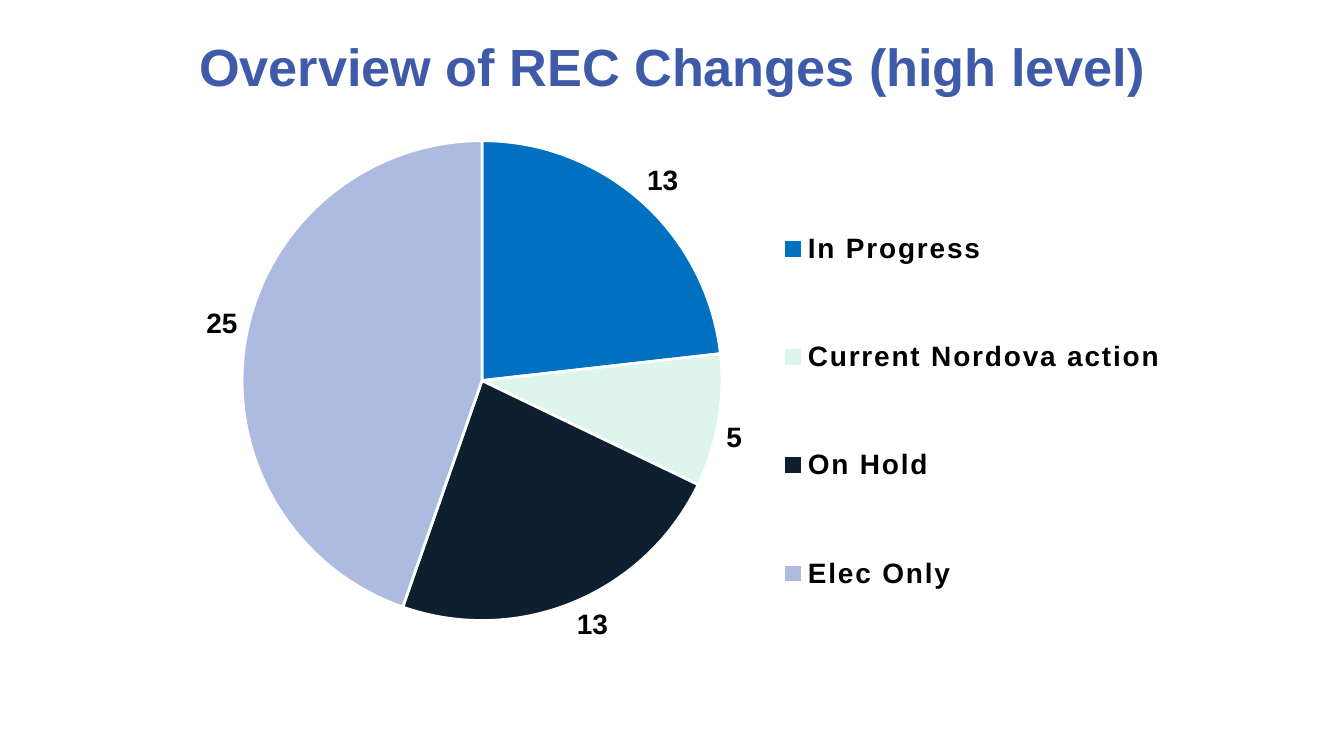
"""Builds the overview slide of REC changes with a pie chart by status."""
from lxml import etree
from pptx import Presentation
from pptx import util as u
from pptx.chart.data import CategoryChartData
from pptx.dml.color import RGBColor
from pptx.enum import chart as ch, text
from pptx.oxml import parse_xml
from pptx.oxml.ns import nsdecls, qn

BLUE = RGBColor(0x3E, 0x5A, 0xA8)
BLACK = RGBColor(0, 0, 0)
WHITE = RGBColor(255, 255, 255)
FONT = "Arial"

TITLE = "Overview of REC Changes (high level)"
STATUSES = [
    ("In Progress", 13, RGBColor(0x00, 0x70, 0xC0)),
    ("Current Nordova action", 5, RGBColor(0xDD, 0xF5, 0xEC)),
    ("On Hold", 13, RGBColor(0x0E, 0x1F, 0x30)),
    ("Elec Only", 25, RGBColor(0xAD, 0xBB, 0xE1)),
]
TITLE_BOX = (0.5, 0.14, 9, 0.7)
CHART_BOX = (1.28, 0.83, 7.44, 4.13)
PIE_SHARE = (0.07, 0.05, 0.48, 0.87)
LEGEND_SHARE = (0.61, 0.08, 0.39, 0.92)


def style_font(font, size, color=BLACK, bold=True):
    font.name, font.size, font.bold = FONT, u.Pt(size), bold
    font.color.rgb = color


def set_layout(parent, before, share, inner=False):
    for old in parent.findall(qn("c:layout")):
        parent.remove(old)
    layout = parse_xml(f"<c:layout {nsdecls('c')}><c:manualLayout/></c:layout>")
    settings = [("layoutTarget", "inner")] if inner else []
    settings += [("xMode", "edge"), ("yMode", "edge"), *zip("xywh", share)]
    for tag, value in settings:
        etree.SubElement(layout[0], qn(f"c:{tag}")).set("val", str(value))
    parent.find(qn(before)).addprevious(layout)


def add_title(s):
    sp = s.shapes.title
    sp.left, sp.top, sp.width, sp.height = map(u.Inches, TITLE_BOX)
    tf = sp.text_frame
    tf.vertical_anchor = text.MSO_ANCHOR.MIDDLE
    p = tf.paragraphs[0]
    p.alignment = text.PP_ALIGN.CENTER
    r = p.add_run()
    r.text = TITLE
    style_font(r.font, 28, BLUE)


def add_pie(s):
    names, values, colors = zip(*STATUSES)
    data = CategoryChartData()
    data.categories = names
    data.add_series("Series 1", values)
    chart = s.shapes.add_chart(
        ch.XL_CHART_TYPE.PIE, *map(u.Inches, CHART_BOX), data).chart
    style_font(chart.font, 10, bold=False)
    chart.has_title = False

    chart.has_legend = True
    legend = chart.legend
    legend.position = ch.XL_LEGEND_POSITION.RIGHT
    legend.include_in_layout = False
    style_font(legend.font, 15)
    legend_xml = chart._chartSpace.find(".//" + qn("c:legend"))
    legend_xml.find(".//" + qn("a:defRPr")).set("spc", "100")
    set_layout(legend_xml, "c:overlay", LEGEND_SHARE)

    plot = chart.plots[0]
    plot.vary_by_categories = True
    series = plot.series[0]
    for i, color in enumerate(colors):
        point = series.points[i].format
        point.fill.solid()
        point.fill.fore_color.rgb = color
        point.line.color.rgb = WHITE
        point.line.width = u.Pt(1.5)
    labels = series.data_labels
    labels.show_value = True
    labels.show_percentage = False
    labels.position = ch.XL_LABEL_POSITION.OUTSIDE_END
    style_font(labels.font, 15)
    plot_xml = chart._chartSpace.find(".//" + qn("c:plotArea"))
    set_layout(plot_xml, "c:pieChart", PIE_SHARE, inner=True)


def main():
    prs = Presentation()
    prs.slide_width = u.Inches(10)
    prs.slide_height = prs.slide_width * 9 // 16
    s = prs.slides.add_slide(prs.slide_layouts[5])
    add_title(s)
    add_pie(s)
    prs.save("out.pptx")


if __name__ == "__main__":
    main()
